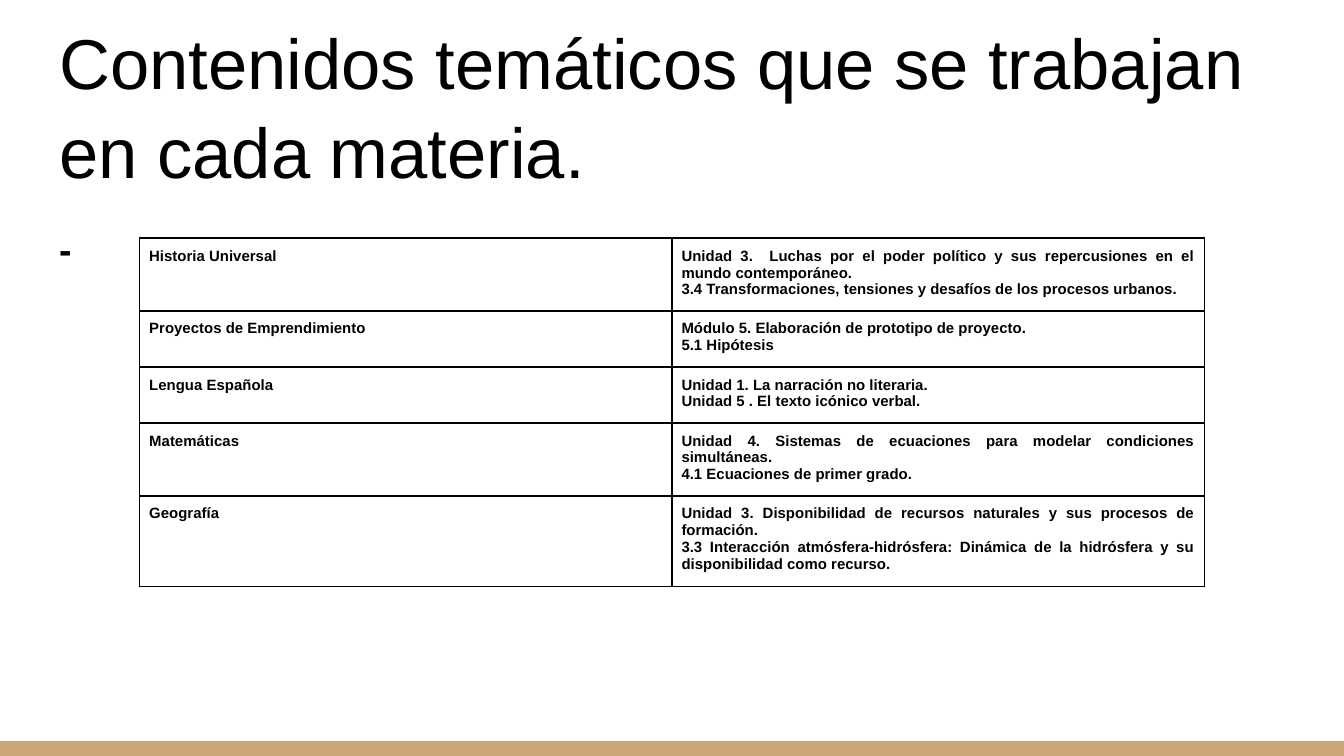
import pptx
import pptx.dml.color
import pptx.enum.shapes
import pptx.enum.text
import pptx.oxml
import pptx.oxml.ns
import pptx.util

Cm = pptx.util.Cm
Pt = pptx.util.Pt
ALIGN = pptx.enum.text.PP_ALIGN
ANCHOR = pptx.enum.text.MSO_ANCHOR

SUBJECTS = [
    ("Historia Universal", [
        "Unidad 3.  Luchas por el poder político y sus repercusiones en el mundo contemporáneo.",
        "3.4 Transformaciones, tensiones y desafíos de los procesos urbanos.",
    ]),
    ("Proyectos de Emprendimiento", [
        "Módulo 5. Elaboración de prototipo de proyecto.",
        "5.1 Hipótesis",
    ]),
    ("Lengua Española", [
        "Unidad 1. La narración no literaria.",
        "Unidad 5 . El texto icónico verbal.",
    ]),
    ("Matemáticas", [
        "Unidad 4. Sistemas de ecuaciones para modelar condiciones simultáneas.",
        "4.1 Ecuaciones de primer grado.",
    ]),
    ("Geografía", [
        "Unidad 3. Disponibilidad de recursos naturales y sus procesos de formación.",
        "3.3 Interacción atmósfera-hidrósfera: Dinámica de la hidrósfera y su "
        "disponibilidad como recurso.",
    ]),
]


def color(value):
    return pptx.dml.color.RGBColor.from_string(value)


def write(frame, lines, size, bold=False, align=ALIGN.LEFT, spacing=1.0, after=0):
    for index, line in enumerate(lines):
        paragraph = frame.add_paragraph() if index else frame.paragraphs[0]
        paragraph.alignment = align
        paragraph.line_spacing = spacing
        paragraph.space_after = Pt(after)
        run = paragraph.add_run()
        run.text = line
        run.font.name = SubjectSlide.font
        run.font.size = Pt(size)
        run.font.bold = bold
        run.font.color.rgb = color(SubjectSlide.ink)


class SubjectSlide:
    font = "Arial"
    ink = "000000"
    accent = "CCA677"
    text_inset = Cm(0.25)
    cell_inset = Cm(0.18)

    def __init__(self, slide):
        self.slide = slide

    def bar(self, left, top, width, height):
        strip = self.slide.shapes.add_shape(
            pptx.enum.shapes.MSO_SHAPE.RECTANGLE, left, top, width, height)
        strip.shadow.inherit = False
        strip.fill.solid()
        strip.fill.fore_color.rgb = color(self.accent)
        strip.line.fill.background()

    def text(self, lines, left, top, width, height, anchor=ANCHOR.TOP, **style):
        frame = self.slide.shapes.add_textbox(left, top, width, height).text_frame
        frame.word_wrap = True
        frame.vertical_anchor = anchor
        frame.margin_left = frame.margin_right = self.text_inset
        frame.margin_top = frame.margin_bottom = self.text_inset
        write(frame, lines, **style)

    def border(self, cell):
        properties = cell._tc.get_or_add_tcPr()
        for index, side in enumerate(("lnL", "lnR", "lnT", "lnB")):
            edge = pptx.oxml.parse_xml(
                f'<a:{side} {pptx.oxml.ns.nsdecls("a")} w="{Pt(1)}"><a:solidFill>'
                f'<a:srgbClr val="{self.ink}"/></a:solidFill></a:{side}>')
            properties.insert(index, edge)

    def cell(self, cell, lines, align):
        cell.margin_left = cell.margin_right = self.cell_inset
        cell.margin_top = cell.margin_bottom = self.cell_inset
        cell.fill.background()
        self.border(cell)
        write(cell.text_frame, lines, size=8, bold=True, align=align)

    def table(self, subjects, left, top, width, row_height):
        grid = self.slide.shapes.add_table(
            len(subjects), 2, left, top, width, row_height * len(subjects)).table
        grid.first_row = False
        grid.horz_banding = False
        for row, (subject, contents) in enumerate(subjects):
            self.cell(grid.cell(row, 0), [subject], ALIGN.LEFT)
            self.cell(grid.cell(row, 1), contents, ALIGN.JUSTIFY)


def main():
    deck = pptx.Presentation()
    deck.slide_width = Cm(25.4)
    deck.slide_height = Cm(14.29)
    page = SubjectSlide(deck.slides.add_slide(deck.slide_layouts[6]))
    page.bar(Cm(0), Cm(14.01), deck.slide_width, Cm(0.28))
    page.text(["Contenidos temáticos que se trabajan en cada materia."],
              Cm(0.87), Cm(0.88), Cm(23.67), Cm(3.02),
              anchor=ANCHOR.BOTTOM, size=37.8, spacing=1.05)
    page.text(["-"], Cm(0.87), Cm(3.89), Cm(23.67), Cm(8.82),
              size=20, bold=True, spacing=1.15, after=12)
    page.table(SUBJECTS, Cm(2.64), Cm(4.5), Cm(20.12), Cm(1.06))
    deck.save("out.pptx")


if __name__ == "__main__":
    main()
